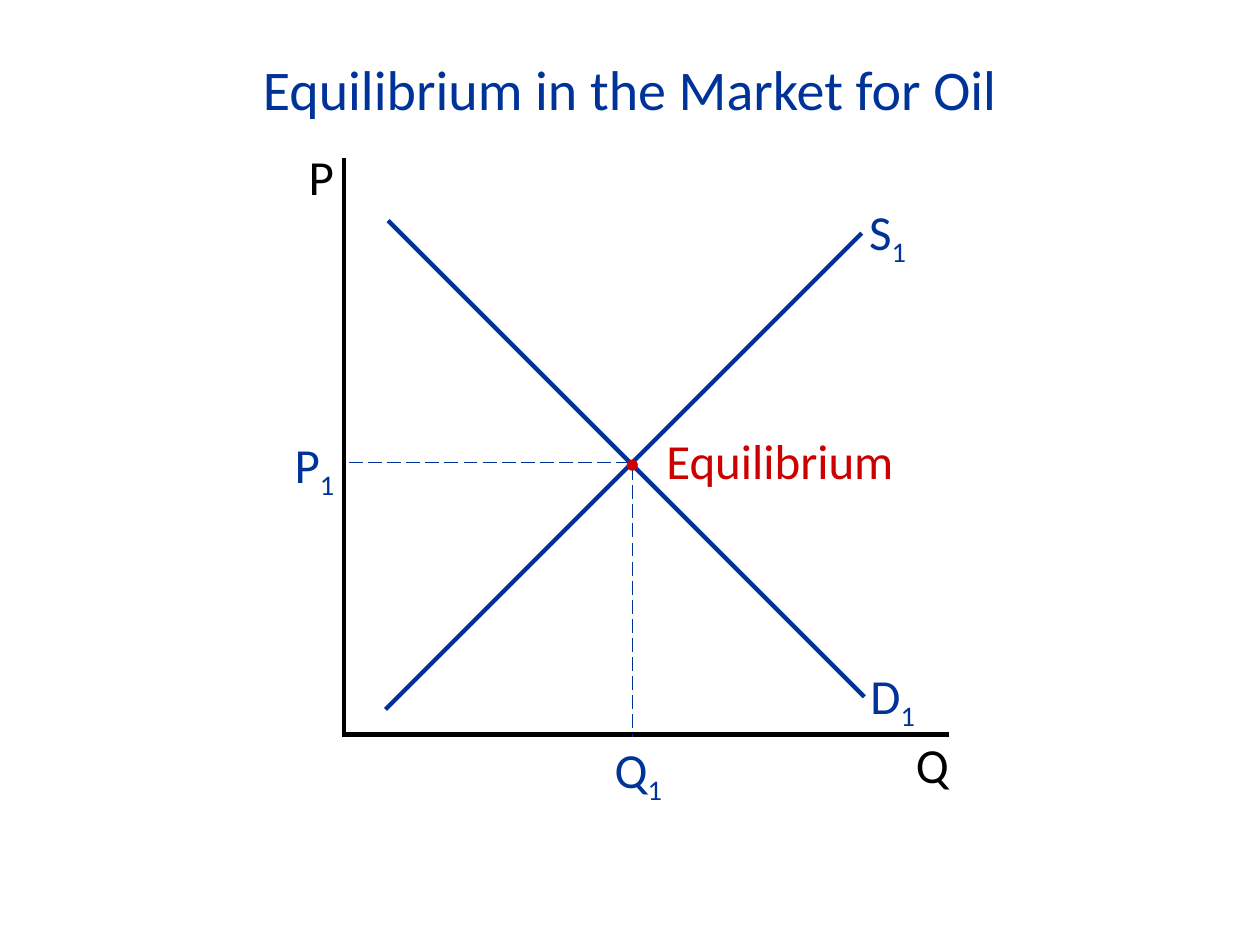
import pptx
import pptx.dml.color
import pptx.enum.dml
import pptx.enum.shapes
import pptx.enum.text
import pptx.oxml.ns
import pptx.util
from pptx.util import Inches
import lxml.etree

RGBColor = pptx.dml.color.RGBColor
BLUE = RGBColor(0x00, 0x33, 0x99)
RED = RGBColor(0xCC, 0x00, 0x00)
BLACK = RGBColor(0x00, 0x00, 0x00)
FONT = "Calibri"
LONG_DASH = pptx.enum.dml.MSO_LINE.LONG_DASH
GROW = pptx.enum.text.MSO_AUTO_SIZE.SHAPE_TO_FIT_TEXT
MIDDLE = pptx.enum.text.MSO_ANCHOR.MIDDLE
CENTER = pptx.enum.text.PP_ALIGN.CENTER


def set_attrs(target, values):
    for name, value in values.items():
        setattr(target, name, value)


def add_run(p, text, size, color, subscript=False):
    r = p.add_run()
    r.text = text
    set_attrs(r.font, {"name": FONT, "size": pptx.util.Pt(size)})
    r.font.color.rgb = color
    if subscript:
        r._r.get_or_add_rPr().set("baseline", "-25000")


def add_title(s, text, left, top, width, height):
    sp = s.shapes.title
    set_attrs(sp, {"left": Inches(left), "top": Inches(top),
                   "width": Inches(width), "height": Inches(height)})
    tf = sp.text_frame
    set_attrs(tf, {"word_wrap": True, "auto_size": GROW, "vertical_anchor": MIDDLE})
    p = tf.paragraphs[0]
    p.alignment = CENTER
    add_run(p, text, 32, BLUE)


def add_line(s, x1, y1, x2, y2, color, width, dash=None):
    sp = s.shapes.add_connector(pptx.enum.shapes.MSO_CONNECTOR.STRAIGHT,
                                Inches(x1), Inches(y1), Inches(x2), Inches(y2))
    sp.line.color.rgb = color
    set_attrs(sp.line, {"width": pptx.util.Pt(width), "dash_style": dash})
    lxml.etree.SubElement(sp._element.spPr, pptx.oxml.ns.qn("a:effectLst"))


def add_label(s, left, top, width, height, text, sub, color, size=28, spacing=None):
    sp = s.shapes.add_textbox(Inches(left), Inches(top), Inches(width), Inches(height))
    tf = sp.text_frame
    set_attrs(tf, {"word_wrap": True, "auto_size": GROW})
    p = tf.paragraphs[0]
    p.line_spacing = spacing
    add_run(p, text, size, color)
    if sub:
        add_run(p, sub, size, color, subscript=True)


def add_market_diagram(s, left, top, width, height):
    axis_y = height - 0.02
    eq_x, eq_y = 2.29, 2.42
    run = 3.78
    lines = [
        (0.33, 4.38, 0.33 + run, 4.38 - run, BLUE, 2.5),
        (0, 0, 0, height, BLACK, 2.5),
        (0, axis_y, width, axis_y, BLACK, 2.5),
        (0.35, 0.5, 0.35 + run, 0.5 + run, BLUE, 2.5),
        (0.04, eq_y, eq_x - 0.02, eq_y, BLUE, 1, LONG_DASH),
        (eq_x, eq_y + 0.03, eq_x, height, BLUE, 1, LONG_DASH),
    ]
    labels = [
        (4.08, 3.98, 0.58, 0.57, "D", "1", BLUE),
        (4.44, 4.53, 0.51, 0.57, "Q", "", BLACK),
        (-0.38, -0.05, 0.45, 0.49, "P", "", BLACK, 28, 0.8),
        (4.07, 0.3, 0.58, 0.57, "S", "1", BLUE),
        (-0.49, 2.2, 0.58, 0.49, "P", "1", BLUE, 28, 0.8),
        (2.05, 4.62, 0.75, 0.48, "Q", "1", BLUE, 28, 0.8),
        (2.46, 2.12, 2.25, 0.57, "Equilibrium", "", RED),
        (2.13, 2.22, 0.54, 0.4, "•", "", RED, 18),
    ]
    for x1, y1, x2, y2, *style in lines:
        add_line(s, left + x1, top + y1, left + x2, top + y2, *style)
    for x, y, *rest in labels:
        add_label(s, left + x, top + y, *rest)


def main():
    prs = pptx.Presentation()
    set_attrs(prs, {"slide_width": Inches(10), "slide_height": Inches(7.5)})
    s = prs.slides.add_slide(prs.slide_layouts[5])
    add_title(s, "Equilibrium in the Market for Oil", 0.7, 0.38, 8.6, 0.64)
    add_market_diagram(s, 2.73, 1.25, 4.8, 4.6)
    prs.save("out.pptx")


if __name__ == "__main__":
    main()
